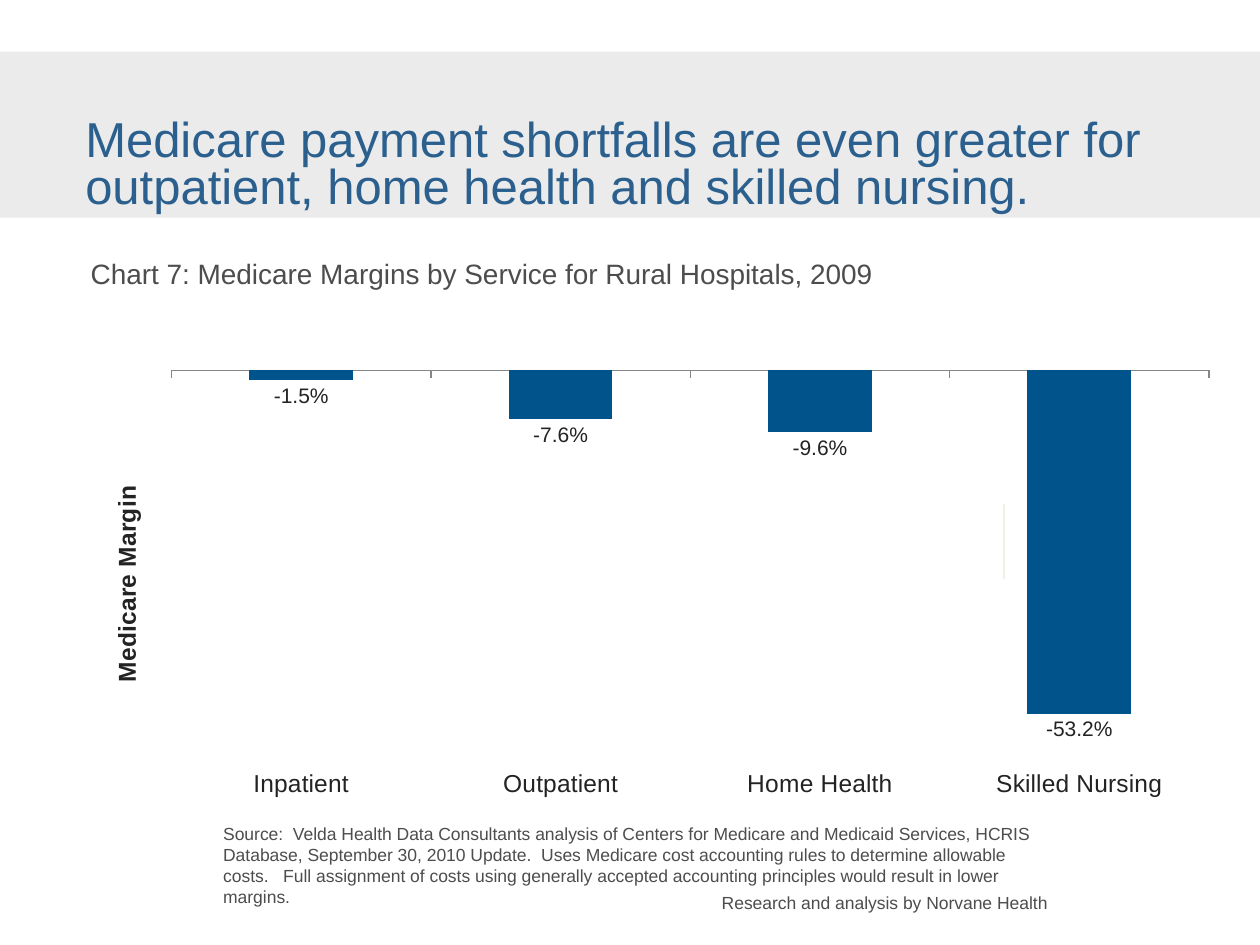
from dataclasses import dataclass
from pptx import Presentation
from pptx.chart.data import CategoryChartData as Data
from pptx.dml.color import RGBColor as Rgb
from pptx.enum.chart import XL_CHART_TYPE as Kind, XL_LABEL_POSITION as Spot
from pptx.enum.chart import XL_TICK_LABEL_POSITION as Place, XL_TICK_MARK as Tick
from pptx.enum.shapes import MSO_SHAPE as Form
from pptx.oxml import parse_xml
from pptx.oxml.ns import nsdecls
from pptx.util import Cm, Pt


@dataclass(frozen=True)
class Theme:
    font: str = "Arial"
    band: str = "EBEBEB"
    head: str = "2B608E"
    grey: str = "4D4D4D"
    ink: str = "232323"
    bar: str = "00548B"
    mark: str = "799D34"
    axis: str = "878787"
    big: int = 28
    mid: int = 16
    axes: int = 14
    tag: int = 12
    note: int = 10


class Deck:
    def __init__(self, theme):
        self.theme = theme
        self.prs = Presentation()
        self.prs.slide_width, self.prs.slide_height = Cm(25.4), Cm(19.05)
        self.slide = self.prs.slides.add_slide(self.prs.slide_layouts[6])

    def style(self, font, size, color, bold=False):
        font.name, font.size, font.bold = self.theme.font, Pt(size), bold
        font.color.rgb = Rgb.from_string(color)

    def rect(self, box, color):
        shape = self.slide.shapes.add_shape(Form.RECTANGLE, *map(Cm, box))
        shape.shadow.inherit = False
        shape.fill.solid()
        shape.fill.fore_color.rgb = Rgb.from_string(color)
        shape.line.fill.background()

    def text(self, box, words, size, color, lead=None, pad=(0, 0)):
        frame = self.slide.shapes.add_textbox(*map(Cm, box)).text_frame
        frame.word_wrap = True
        frame.margin_left = frame.margin_right = Cm(pad[0])
        frame.margin_top = frame.margin_bottom = Cm(pad[1])
        para = frame.paragraphs[0]
        para.text = words
        para.line_spacing = lead
        self.style(para.font, size, color)

    def layout(self, **spots):
        parts = "".join(f'<c:{key} val="{val}"/>' for key, val in spots.items())
        return parse_xml(f'<c:layout {nsdecls("c")}><c:manualLayout>{parts}'
                         '</c:manualLayout></c:layout>')

    def chart(self, box, title, rows):
        theme = self.theme
        data = Data(number_format="0.0%")
        data.categories = list(rows)
        data.add_series("Series 1", list(rows.values()))
        chart = self.slide.shapes.add_chart(
            Kind.COLUMN_CLUSTERED, *map(Cm, box), data).chart
        chart.has_legend = chart.has_title = False
        self.style(chart.font, 18, theme.ink)

        cat = chart.category_axis
        cat.tick_label_position = Place.LOW
        cat.major_tick_mark = Tick.OUTSIDE
        cat.format.line.color.rgb = Rgb.from_string(theme.axis)
        self.style(cat.tick_labels.font, theme.axes, theme.ink)

        val = chart.value_axis
        val.minimum_scale, val.maximum_scale = -0.6, 0
        val.has_major_gridlines = val.visible = False
        val.tick_labels.number_format = "0%"
        val.tick_labels.number_format_is_linked = False
        para = val.axis_title.text_frame.paragraphs[0]
        para.text = title
        self.style(para.font, theme.axes, theme.ink, bold=True)

        plot = chart.plots[0]
        plot.gap_width = 150
        plot.vary_by_categories = False
        fill = plot.series[0].format.fill
        fill.solid()
        fill.fore_color.rgb = Rgb.from_string(theme.bar)
        plot.series[0].invert_if_negative = False
        plot.has_data_labels = True
        tags = plot.data_labels
        tags.show_value = True
        tags.number_format, tags.number_format_is_linked = "0.0%", False
        tags.position = Spot.OUTSIDE_END
        self.style(tags.font, theme.tag, theme.ink)

        area = chart.plots[0]._element.getparent()
        for old in area.findall("{*}layout"):
            area.remove(old)
        area.insert(0, self.layout(layoutTarget="inner", xMode="edge", yMode="edge",
                                   x=0.08, y=0.02, w=0.9, h=0.87))


def main():
    theme = Theme()
    deck = Deck(theme)
    deck.rect((0, 1.04, 25.4, 3.35), theme.band)
    deck.text((14.55, 17.98, 6.9, 0.43), "Research and analysis by Norvane Health",
              theme.note, theme.grey)
    deck.text((1.83, 5.31, 20.73, 0.56),
              "Chart 7: Medicare Margins by Service for Rural Hospitals, 2009",
              theme.mid, theme.grey, 0.8)
    deck.text((4.5, 16.59, 16.76, 1.27),
              "Source:  Velda Health Data Consultants analysis of Centers for Medicare "
              "and Medicaid Services, HCRIS Database, September 30, 2010 Update.  Uses "
              "Medicare cost accounting rules to determine allowable costs.   Full "
              "assignment of costs using generally accepted accounting principles would "
              "result in lower margins.", theme.note, theme.grey)
    deck.text((1.47, 2.29, 22.86, 1.9),
              "Medicare payment shortfalls are even greater for outpatient, "
              "home health and skilled nursing.",
              theme.big, theme.head, 0.8, (0.25, 0.13))
    deck.rect((20.24, 10.16, 0, 1.52), theme.mark)
    deck.chart((1.6, 7.29, 23.24, 8.97), "Medicare Margin",
               {"Inpatient": -0.015, "Outpatient": -0.076,
                "Home Health": -0.096, "Skilled Nursing": -0.532})
    deck.prs.save("out.pptx")


if __name__ == "__main__":
    main()
